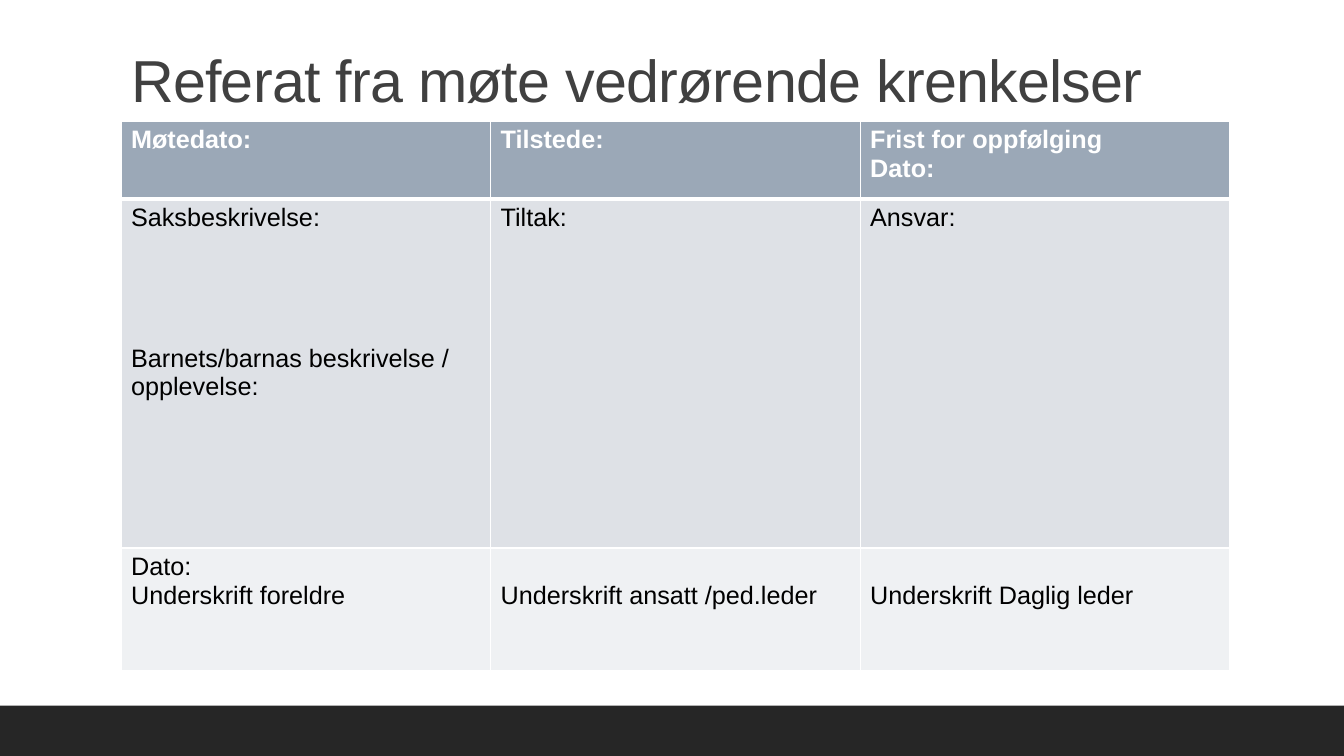
"""Build a one-slide meeting record form with a title, a table and a footer bar."""
from lxml import etree
from pptx import Presentation
from pptx.dml.color import RGBColor
from pptx.enum.shapes import MSO_SHAPE
from pptx.enum.text import MSO_ANCHOR, MSO_AUTO_SIZE, PP_ALIGN
from pptx.oxml.ns import qn
from pptx.util import Cm, Pt

RECTANGLE = MSO_SHAPE.RECTANGLE
BOTTOM = MSO_ANCHOR.BOTTOM
LEFT = PP_ALIGN.LEFT
NO_AUTOFIT = MSO_AUTO_SIZE.NONE

THEME = {
    "font": "Arial",
    "title_size": Pt(42.3),
    "body_size": Pt(18),
    "title": RGBColor.from_string("404040"),
    "header_text": RGBColor.from_string("FFFFFF"),
    "body_text": RGBColor.from_string("000000"),
    "bar": RGBColor.from_string("262626"),
    "rows": [RGBColor.from_string(c) for c in ("9BA8B7", "DEE1E6", "EFF1F3")],
    "border": "FFFFFF",
}

ROW_HEIGHTS = [1.96, 8.8, 3.1]
CELLS = [
    ["Møtedato:", "Tilstede:", "Frist for oppfølging\nDato:"],
    ["Saksbeskrivelse:\nBarnets/barnas beskrivelse / opplevelse:", "Tiltak:", "Ansvar:"],
    ["Dato:\nUnderskrift foreldre", "Underskrift ansatt /ped.leder", "Underskrift Daglig leder"],
]


def style_run(r, size, color, bold=False):
    """Apply the theme font to a run."""
    r.font.name = THEME["font"]
    r.font.size = size
    r.font.bold = bold
    r.font.color.rgb = color


def add_border(cell, side, width):
    """Draw one solid border on a cell."""
    ln = etree.SubElement(cell._tc.get_or_add_tcPr(), qn(f"a:ln{side}"), w=str(Pt(width)))
    fill = etree.SubElement(ln, qn("a:solidFill"))
    etree.SubElement(fill, qn("a:srgbClr"), val=THEME["border"])


prs = Presentation()
prs.slide_width, prs.slide_height = Cm(33.87), Cm(19.05)
s = prs.slides.add_slide(prs.slide_layouts[5])

bar = s.shapes.add_shape(RECTANGLE, 0, Cm(17.78), prs.slide_width, Cm(1.27))
bar.shadow.inherit = False
bar.fill.solid()
bar.fill.fore_color.rgb = THEME["bar"]
bar.line.fill.background()

title = s.shapes.title
title.left, title.top, title.width, title.height = Cm(3.05), Cm(0.79), Cm(27.94), Cm(2.24)
tf = title.text_frame
tf.text = "Referat fra møte vedrørende krenkelser"
tf.word_wrap = True
tf.auto_size = NO_AUTOFIT
tf.vertical_anchor = BOTTOM
p = tf.paragraphs[0]
p.alignment = LEFT
p.line_spacing = 0.9
r = p.runs[0]
style_run(r, THEME["title_size"], THEME["title"])
r.font._element.set("spc", "-50")

table = s.shapes.add_table(3, 3, Cm(3.05), Cm(3.05), Cm(27.94), Cm(sum(ROW_HEIGHTS))).table
for i, texts in enumerate(CELLS):
    table.rows[i].height = Cm(ROW_HEIGHTS[i])
    for j, text in enumerate(texts):
        cell = table.cell(i, j)
        widths = {"L": 1, "R": 1, "T": 3 if i == 1 else 1, "B": 3 if i == 0 else 1}
        for side, width in widths.items():
            add_border(cell, side, width)
        cell.fill.solid()
        cell.fill.fore_color.rgb = THEME["rows"][i]
        cell.text_frame.text = text
        for p in cell.text_frame.paragraphs:
            color = THEME["header_text"] if i == 0 else THEME["body_text"]
            style_run(p.runs[0], THEME["body_size"], color, bold=i == 0)

table.cell(1, 0).text_frame.paragraphs[1].space_before = Pt(80.5)
for j in (1, 2):
    table.cell(2, j).margin_top = Cm(0.84)

prs.save("out.pptx")
